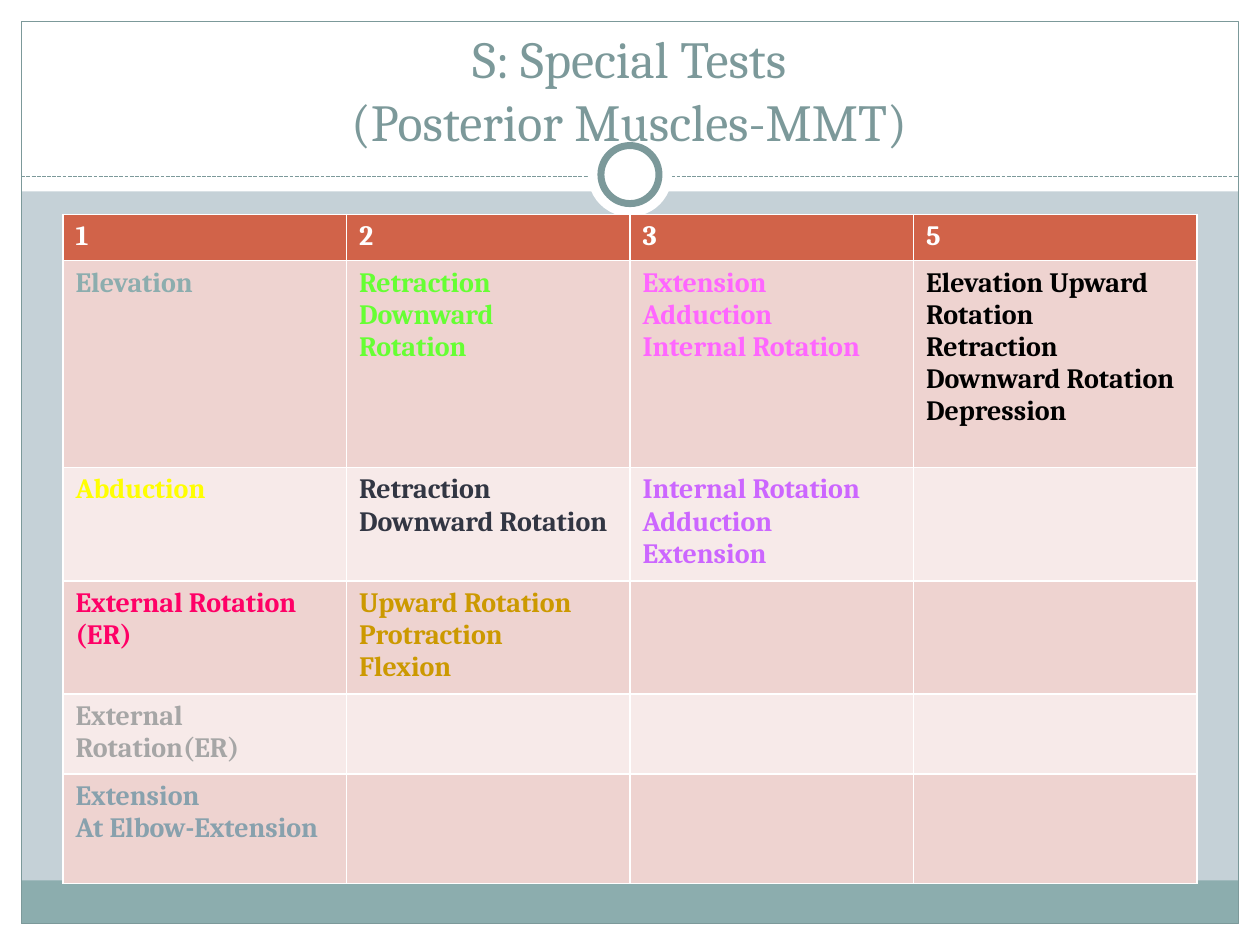
import pptx
import pptx.dml.color
import pptx.enum.dml
import pptx.enum.shapes
import pptx.enum.text
import pptx.oxml
import pptx.oxml.ns
import pptx.util
from lxml import etree

Cm = pptx.util.Cm
Pt = pptx.util.Pt
RGB = pptx.dml.color.RGBColor
SHAPE = pptx.enum.shapes.MSO_SHAPE

WHITE = RGB(0xFF, 0xFF, 0xFF)
BACKDROP = RGB(0xC5, 0xD1, 0xD7)
FOOTER = RGB(0x8C, 0xAD, 0xAE)
SLATE = RGB(0x7C, 0x99, 0x9A)
HEADER = RGB(0xD1, 0x63, 0x49)
BANDS = (RGB(0xEE, 0xD3, 0xD0), RGB(0xF7, 0xEA, 0xE9))
GREEN = RGB(0x66, 0xFF, 0x33)
PINK = RGB(0xFF, 0x66, 0xFF)
BLACK = RGB(0x00, 0x00, 0x00)
YELLOW = RGB(0xFF, 0xFF, 0x00)
NAVY = RGB(0x32, 0x36, 0x43)
PURPLE = RGB(0xCC, 0x66, 0xFF)
CRIMSON = RGB(0xFF, 0x00, 0x66)
GOLD = RGB(0xCC, 0x99, 0x00)
GREY = RGB(0xA6, 0xA6, 0xA6)
STEEL = RGB(0x88, 0xA1, 0xAD)

WIDTH, HEIGHT, MARGIN = 25.4, 19.05, 0.43
FONT = "Cambria"
TITLE = ("S: Special Tests", "(Posterior Muscles-MMT)")
TITLE_FORMAT = {"name": FONT, "size": Pt(29.7)}
CELL_FORMAT = {"name": FONT, "size": Pt(16), "bold": True}

GRADES = ("1", "2", "3", "5")
ROW_HEIGHTS = (0.89, 4.17, 2.21, 2.21, 1.55, 2.21)
# Each muscle action group: its lines and its colour
MOVEMENTS = (
    ((("Elevation",), FOOTER),
     (("Retraction", "Downward", "Rotation"), GREEN),
     (("Extension", "Adduction", "Internal Rotation"), PINK),
     (("Elevation Upward Rotation", "Retraction", "Downward Rotation",
       "Depression"), BLACK)),
    ((("Abduction",), YELLOW),
     (("Retraction", "Downward Rotation"), NAVY),
     (("Internal Rotation", "Adduction", "Extension"), PURPLE)),
    ((("External Rotation (ER)",), CRIMSON),
     (("Upward Rotation", "Protraction", "Flexion"), GOLD)),
    ((("External Rotation(ER)",), GREY),),
    ((("Extension", "At Elbow-Extension"), STEEL),),
)


def format_font(font, values, color):
    for attribute, value in values.items():
        setattr(font, attribute, value)
    font.color.rgb = color


def add_panel(slide, box, fill=None, line=None, line_width=0.75,
              kind=SHAPE.RECTANGLE):
    panel = slide.shapes.add_shape(kind, *map(Cm, box))
    panel.shadow.inherit = False
    if fill is None:
        panel.fill.background()
    else:
        panel.fill.solid()
        panel.fill.fore_color.rgb = fill
    if line is None:
        panel.line.fill.background()
    else:
        panel.line.color.rgb = line
        panel.line.width = Pt(line_width)


def add_frame(slide):
    """Margins, title band, footer band and outline."""
    inner_width = WIDTH - 2 * MARGIN
    for box in ((0, HEIGHT - MARGIN, WIDTH, MARGIN),
                (0, 0, WIDTH, 3.86),
                (0, 0, MARGIN, HEIGHT),
                (WIDTH - MARGIN, 0, MARGIN, HEIGHT)):
        add_panel(slide, box, WHITE)
    add_panel(slide, (MARGIN, 17.75, inner_width, 0.87), FOOTER)
    add_panel(slide, (MARGIN, MARGIN, inner_width, HEIGHT - 2 * MARGIN),
              line=SLATE)


def add_divider(slide, y):
    divider = slide.shapes.add_connector(
        pptx.enum.shapes.MSO_CONNECTOR.STRAIGHT,
        Cm(MARGIN), Cm(y), Cm(WIDTH - MARGIN), Cm(y))
    divider.line.color.rgb = SLATE
    divider.line.width = Pt(0.75)
    divider.line.dash_style = pptx.enum.dml.MSO_LINE.SQUARE_DOT
    properties = divider._element.spPr
    etree.SubElement(properties, pptx.oxml.ns.qn("a:effectLst"))


def add_ring(slide, center_y):
    for diameter, line in ((1.7, None), (1.17, SLATE)):
        box = (WIDTH / 2 - diameter / 2, center_y - diameter / 2,
               diameter, diameter)
        add_panel(slide, box, WHITE, line, 4, SHAPE.OVAL)


def add_title(slide):
    title = slide.shapes.add_textbox(Cm(0.84), Cm(0.64), Cm(23.7), Cm(2.54))
    frame = title.text_frame
    frame.word_wrap = True
    frame.vertical_anchor = pptx.enum.text.MSO_ANCHOR.BOTTOM
    paragraph = frame.paragraphs[0]
    paragraph.alignment = pptx.enum.text.PP_ALIGN.CENTER
    for number, line in enumerate(TITLE):
        if number:
            paragraph.add_line_break()
        run = paragraph.add_run()
        run.text = line
        format_font(run.font, TITLE_FORMAT, SLATE)


def style_cell(cell, fill):
    """White one-point borders and a solid fill."""
    properties = cell._tc.get_or_add_tcPr()
    for side in ("lnL", "lnR", "lnT", "lnB"):
        properties.append(pptx.oxml.parse_xml(
            f'<a:{side} {pptx.oxml.ns.nsdecls("a")} w="{Pt(1)}">'
            f'<a:solidFill><a:srgbClr val="{WHITE}"/></a:solidFill>'
            f'</a:{side}>'))
    cell.fill.solid()
    cell.fill.fore_color.rgb = fill


def write_cell(cell, lines, color):
    frame = cell.text_frame
    frame.text = "\n".join(lines)
    for paragraph in frame.paragraphs:
        format_font(paragraph.runs[0].font, CELL_FORMAT, color)


def add_movement_table(slide):
    header = tuple(((grade,), WHITE) for grade in GRADES)
    contents = (header, *MOVEMENTS)
    table = slide.shapes.add_table(
        len(contents), len(GRADES), Cm(1.27), Cm(4.32),
        Cm(22.86), Cm(sum(ROW_HEIGHTS))).table
    for number, (height, groups) in enumerate(zip(ROW_HEIGHTS, contents)):
        row = table.rows[number]
        row.height = Cm(height)
        fill = BANDS[(number - 1) % 2] if number else HEADER
        for cell in row.cells:
            style_cell(cell, fill)
        for cell, (lines, color) in zip(row.cells, groups):
            write_cell(cell, lines, color)


def main():
    presentation = pptx.Presentation()
    presentation.slide_width = Cm(WIDTH)
    presentation.slide_height = Cm(HEIGHT)
    slide = presentation.slides.add_slide(presentation.slide_layouts[6])
    slide.background.fill.solid()
    slide.background.fill.fore_color.rgb = BACKDROP
    add_frame(slide)
    add_divider(slide, 3.56)
    add_ring(slide, 3.52)
    add_title(slide)
    add_movement_table(slide)
    presentation.save("out.pptx")


if __name__ == "__main__":
    main()
